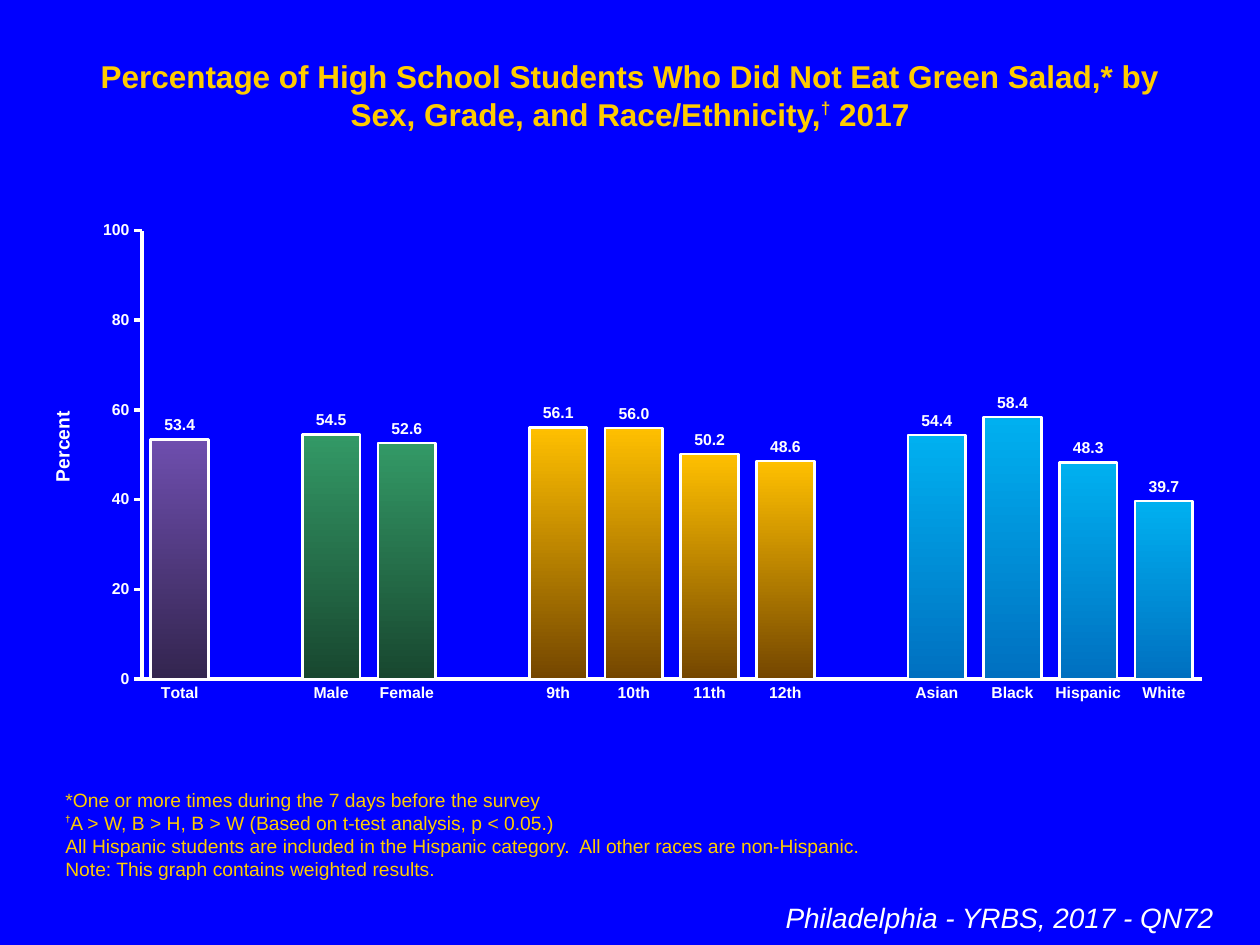
from lxml import etree
from pptx import Presentation
from pptx.chart.data import CategoryChartData
from pptx.dml.color import RGBColor
from pptx.enum.chart import XL_CHART_TYPE, XL_LABEL_POSITION, XL_TICK_MARK
from pptx.enum.text import MSO_ANCHOR, MSO_AUTO_SIZE, PP_ALIGN
from pptx.oxml.ns import qn
from pptx.util import Inches, Pt

COLUMN_CLUSTERED = XL_CHART_TYPE.COLUMN_CLUSTERED
OUTSIDE_END = XL_LABEL_POSITION.OUTSIDE_END
TICK_NONE, TICK_OUT = XL_TICK_MARK.NONE, XL_TICK_MARK.OUTSIDE
TOP, BOTTOM = MSO_ANCHOR.TOP, MSO_ANCHOR.BOTTOM
GROW = MSO_AUTO_SIZE.SHAPE_TO_FIT_TEXT
LEFT, CENTER, RIGHT = PP_ALIGN.LEFT, PP_ALIGN.CENTER, PP_ALIGN.RIGHT

BLUE = RGBColor(0x00, 0x00, 0xFF)
GOLD = RGBColor(0xFF, 0xCC, 0x00)
WHITE = RGBColor(0xFF, 0xFF, 0xFF)
SERIES_GREEN = RGBColor(0x26, 0xCA, 0x59)

# Bar gradients, top to bottom
PURPLES = (RGBColor(0x6E, 0x4E, 0xAE), RGBColor(0x33, 0x25, 0x4F))
GREENS = (RGBColor(0x33, 0x99, 0x66), RGBColor(0x18, 0x47, 0x2F))
AMBERS = (RGBColor(0xFF, 0xC0, 0x00), RGBColor(0x74, 0x46, 0x00))
SKIES = (RGBColor(0x00, 0xB0, 0xF0), RGBColor(0x00, 0x70, 0xC0))

# Each group of bars: gradient, then label and percentage of each bar
GROUPS = [
    (PURPLES, [("Total", 53.4)]),
    (GREENS, [("Male", 54.5), ("Female", 52.6)]),
    (AMBERS, [("9th", 56.1), ("10th", 56.0), ("11th", 50.2), ("12th", 48.6)]),
    (SKIES, [("Asian", 54.4), ("Black", 58.4), ("Hispanic", 48.3), ("White", 39.7)]),
]

# Grid of square cells over the slide
COLUMNS, ROWS, CELL = 100, 75, Inches(0.1)


class SurveySlide:
    font_name = "Arial"

    def __init__(self, presentation):
        self.slide = presentation.slides.add_slide(presentation.slide_layouts[5])
        fill = self.slide.background.fill
        fill.solid()
        fill.fore_color.rgb = BLUE

    def style(self, font, size, color, bold=False, italic=False):
        font.name, font.size = self.font_name, Pt(size)
        font.bold, font.italic = bold, italic
        font.color.rgb = color

    def place(self, shape, column, row, width, height):
        shape.left, shape.top = int(column * CELL), int(row * CELL)
        shape.width, shape.height = int(width * CELL), int(height * CELL)

    def add_runs(self, shape, paragraphs, color, align, anchor=TOP, italic=False):
        """Fill a shape; each run is (text, size, bold, baseline percent)."""
        frame = shape.text_frame
        frame.word_wrap, frame.auto_size = True, GROW
        frame.vertical_anchor = anchor
        for index, runs in enumerate(paragraphs):
            paragraph = frame.add_paragraph() if index else frame.paragraphs[0]
            paragraph.alignment = align
            for text, size, bold, baseline in runs:
                run = paragraph.add_run()
                run.text = text
                self.style(run.font, size, color, bold, italic)
                if baseline:
                    run._r.get_or_add_rPr().set("baseline", str(baseline * 1000))

    def title(self, area, runs):
        shape = self.slide.shapes.title
        self.place(shape, *area)
        self.add_runs(shape, [runs], GOLD, CENTER)

    def text(self, area, paragraphs, color, align, **options):
        shape = self.slide.shapes.add_textbox(0, 0, CELL, CELL)
        self.place(shape, *area)
        self.add_runs(shape, paragraphs, color, align, **options)

    def layout(self, parent, position, target=None, **shares):
        """Pin a chart part at shares of the chart's size."""
        for old in parent.findall(qn("c:layout")):
            parent.remove(old)
        layout = etree.Element(qn("c:layout"))
        manual = etree.SubElement(layout, qn("c:manualLayout"))
        if target:
            etree.SubElement(manual, qn("c:layoutTarget")).set("val", target)
        for side in ("x", "y"):
            etree.SubElement(manual, qn(f"c:{side}Mode")).set("val", "edge")
        for name, share in shares.items():
            etree.SubElement(manual, qn(f"c:{name}")).set("val", str(share))
        parent.insert(position, layout)

    def axis(self, axis, tick_mark):
        axis.has_major_gridlines = False
        axis.major_tick_mark, axis.minor_tick_mark = tick_mark, TICK_NONE
        axis.format.line.color.rgb = WHITE
        axis.format.line.width = Pt(2)
        self.style(axis.tick_labels.font, 9, WHITE, bold=True)

    def bar_chart(self, area, groups, axis_title):
        # Groups stand one empty category apart
        bars = []
        for gradient, members in groups:
            if bars:
                bars.append(("", None, None))
            bars += [(label, value, gradient) for label, value in members]
        data = CategoryChartData(number_format="#,##0.0")
        data.categories = [label for label, _, _ in bars]
        data.add_series("Series 1", [value for _, value, _ in bars])
        frame = self.slide.shapes.add_chart(COLUMN_CLUSTERED, 0, 0, CELL, CELL, data)
        self.place(frame, *area)
        chart = frame.chart
        chart.has_legend = chart.has_title = False
        self.style(chart.font, 18, WHITE)

        # Axes
        self.axis(chart.category_axis, TICK_NONE)
        value_axis = chart.value_axis
        self.axis(value_axis, TICK_OUT)
        value_axis.minimum_scale, value_axis.maximum_scale = 0, 100
        value_axis.major_unit = 20
        value_axis.tick_labels.number_format = "General"
        value_axis.tick_labels.number_format_is_linked = False
        run = value_axis.axis_title.text_frame.paragraphs[0].add_run()
        run.text = axis_title
        self.style(run.font, 11, WHITE, bold=True)
        self.layout(value_axis.axis_title._element, 1, x=0.02, y=0.39)
        plot_area = chart._chartSpace.chart.plotArea
        self.layout(plot_area, 0, "inner", x=0.1, y=0.04, w=0.88, h=0.89)

        # Bars
        plot = chart.plots[0]
        plot.gap_width, plot.overlap, plot.vary_by_categories = 31, 100, False
        series = plot.series[0]
        series.format.fill.solid()
        series.format.fill.fore_color.rgb = SERIES_GREEN
        for index, (_, _, gradient) in enumerate(bars):
            if gradient:
                self.bar(series.points[index].format, gradient)

        # Value labels
        plot.has_data_labels = True
        labels = plot.data_labels
        labels.show_value, labels.position = True, OUTSIDE_END
        labels.number_format, labels.number_format_is_linked = "#,##0.0", False
        self.style(labels.font, 9, WHITE, bold=True)

    def bar(self, bar_format, gradient):
        bar_format.fill.gradient()
        bar_format.fill.gradient_angle = 270
        for stop, color in zip(bar_format.fill.gradient_stops, gradient):
            stop.color.rgb = color
        bar_format.line.color.rgb = WHITE
        bar_format.line.width = Pt(1.5)


def main():
    presentation = Presentation()
    presentation.slide_width = COLUMNS * CELL
    presentation.slide_height = ROWS * CELL
    survey = SurveySlide(presentation)

    survey.title((5, 4, 90, 4), [
        ("Percentage of High School Students Who Did Not Eat Green Salad,* by "
         "Sex, Grade, and Race/Ethnicity,", 18, True, 0),
        ("†", 17, True, 40),
        (" 2017", 18, True, 0),
    ])

    # Footnotes
    survey.text((4.2, 67.5, 91.7, 2.9), [
        [("*One or more times during the 7 days before the survey", 11, False, 0)],
        [("†", 9, True, 50),
         ("A > W, B > H, B > W (Based on t-test analysis, p < 0.05.)", 11, False, 0)],
        [("All Hispanic students are included in the Hispanic category.  "
          "All other races are non-Hispanic.", 11, False, 0)],
        [("Note: This graph contains weighted results.", 11, False, 0)],
    ], GOLD, LEFT, anchor=BOTTOM)

    # Survey name
    survey.text((3.3, 71, 94, 3.7), [
        [("Philadelphia - YRBS, 2017 - QN72", 16, False, 0)],
    ], WHITE, RIGHT, italic=True)

    survey.bar_chart((1.7, 16.7, 95.6, 40), GROUPS, "Percent")
    presentation.save("out.pptx")


if __name__ == "__main__":
    main()
